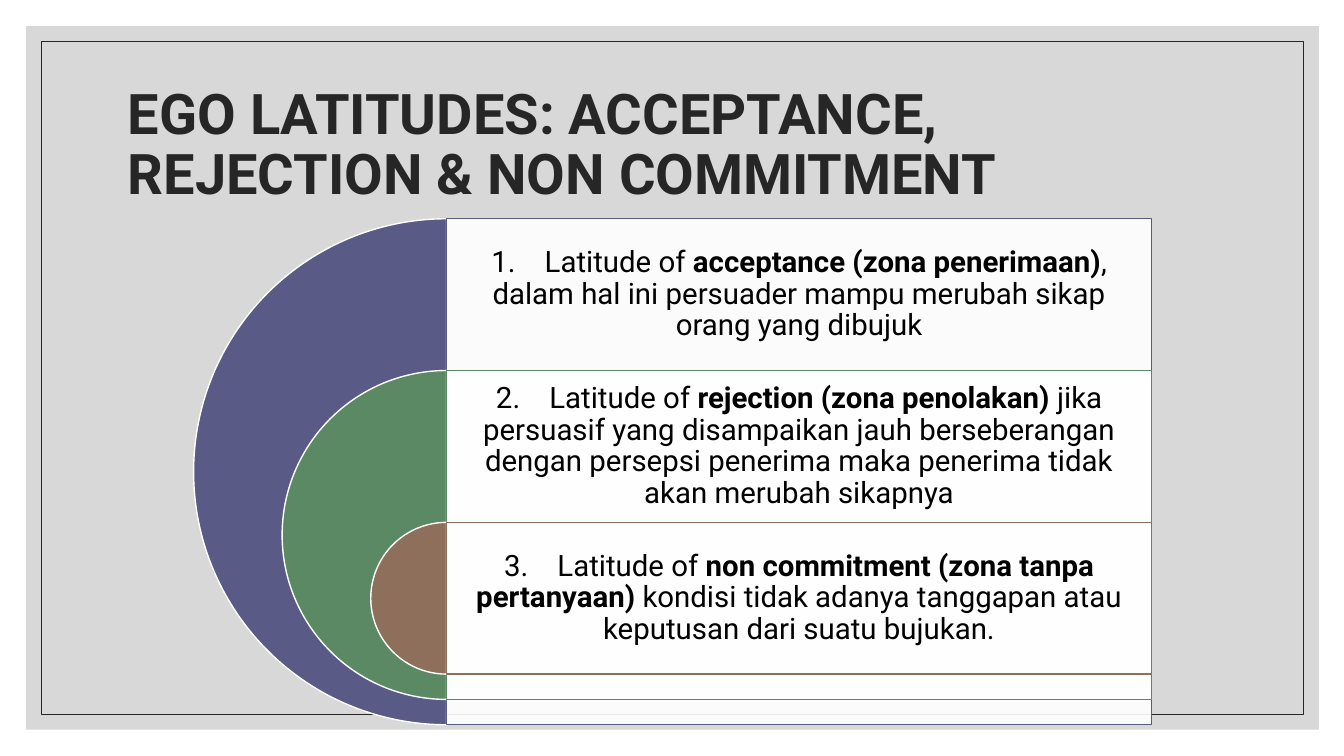
from pptx import Presentation
from pptx.dml.color import RGBColor
from pptx.enum.shapes import MSO_SHAPE
from pptx.enum.text import MSO_ANCHOR, PP_ALIGN
from pptx.oxml.ns import qn
from pptx.util import Inches, Pt
from lxml import etree

RECT, PIE = MSO_SHAPE.RECTANGLE, MSO_SHAPE.PIE
MIDDLE = MSO_ANCHOR.MIDDLE
LEFT, CENTER = PP_ALIGN.LEFT, PP_ALIGN.CENTER

FONT = "Roboto"
COLORS = {
    "panel": "BFBFBF", "ink": "262626", "text": "000000", "white": "FFFFFF",
    "acceptance": "595A85", "rejection": "5A8963", "non_commitment": "8D6F5B",
}
TITLE = "EGO LATITUDES: ACCEPTANCE, REJECTION & NON COMMITMENT"
# colour, then (text, bold) runs
LATITUDES = [
    ("acceptance", [
        ("1.    Latitude of ", False),
        ("acceptance (zona penerimaan)", True),
        (", dalam hal ini persuader mampu merubah sikap orang yang dibujuk", False)]),
    ("rejection", [
        ("2.    Latitude of ", False),
        ("rejection (zona penolakan) ", True),
        ("jika persuasif yang disampaikan jauh berseberangan dengan persepsi "
         "penerima maka penerima tidak akan merubah sikapnya", False)]),
    ("non_commitment", [
        ("3.    Latitude of ", False),
        ("non commitment (zona tanpa pertanyaan) ", True),
        ("kondisi tidak adanya tanggapan atau keputusan dari suatu bujukan.", False)]),
]

AXIS_X, TOP, DIAMETER, BOX_WIDTH = 4.43, 2.17, 5.02, 6.99
ROW = 0.3 * DIAMETER      # height of each text row and of the smallest disc
SHRINK = 0.35 * DIAMETER  # each disc is this much smaller than the one outside it


def rgb(name):
    return RGBColor.from_string(COLORS[name])


def add_shape(s, kind, box, fill=None, line=None, width=1, opacity=100):
    sp = s.shapes.add_shape(kind, *map(Inches, box))
    sp.shadow.inherit = False
    if fill:
        sp.fill.solid()
        sp.fill.fore_color.rgb = rgb(fill)
        if opacity < 100:
            color = sp.fill._xPr.find(qn("a:solidFill"))[0]
            etree.SubElement(color, qn("a:alpha")).set("val", str(opacity * 1000))
    else:
        sp.fill.background()
    if line:
        sp.line.color.rgb = rgb(line)
        sp.line.width = Pt(width)
    else:
        sp.line.fill.background()
    return sp


def add_text(s, box, runs, size, color, align, inset):
    tf = s.shapes.add_textbox(*map(Inches, box)).text_frame
    tf.word_wrap = True
    tf.vertical_anchor = MIDDLE
    tf.margin_left = tf.margin_right = Inches(inset)
    tf.margin_top = tf.margin_bottom = Inches(0.09)
    p = tf.paragraphs[0]
    p.alignment = align
    p.line_spacing = 0.9
    for text, bold in runs:
        r = p.add_run()
        r.text = text
        r.font.name = FONT
        r.font.size = Pt(size)
        r.font.bold = bold
        r.font.color.rgb = rgb(color)


prs = Presentation()
prs.slide_width, prs.slide_height = Inches(13.33), Inches(7.5)
s = prs.slides.add_slide(prs.slide_layouts[6])

add_shape(s, RECT, (0.26, 0.26, 12.82, 6.98), fill="panel", opacity=60)
add_shape(s, RECT, (0.41, 0.41, 12.52, 6.68), line="ink", width=0.5)

for i, (color, runs) in enumerate(LATITUDES):
    top, size = TOP + i * ROW, DIAMETER - i * SHRINK
    disc = add_shape(s, PIE, (AXIS_X - size / 2, top, size, size), color, "white")
    disc.adjustments[0], disc.adjustments[1] = 54, 162  # left half, 90° to 270°
    add_shape(s, RECT, (AXIS_X, top, BOX_WIDTH, size), "white", color, opacity=90)
    add_text(s, (AXIS_X, top, BOX_WIDTH, ROW), runs, 21, "text", CENTER, 0.09)

add_text(s, (1.17, 0.7, 11, 1.5), [(TITLE, True)], 40, "ink", LEFT, 0.1)

prs.save("out.pptx")
